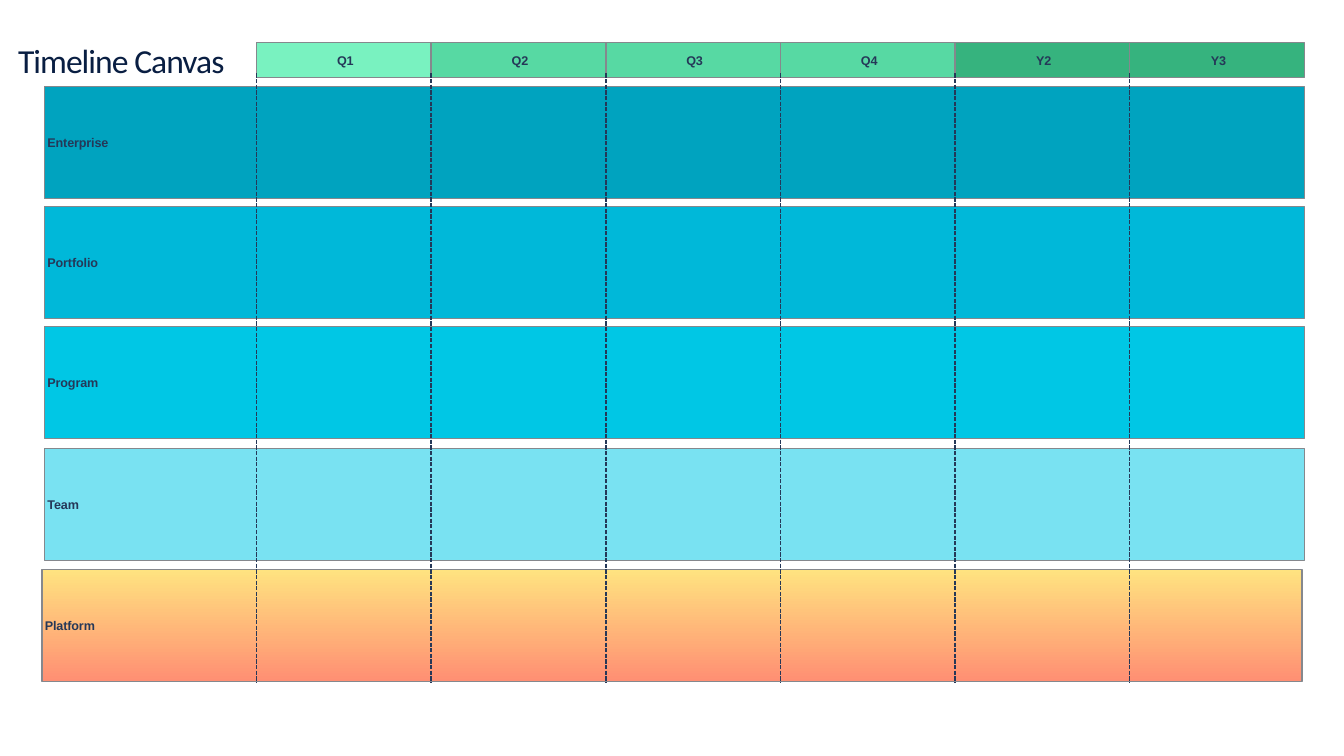
from dataclasses import dataclass
from pptx import Presentation
from pptx.dml.color import RGBColor
from pptx.enum.dml import MSO_LINE
from pptx.enum.shapes import MSO_CONNECTOR, MSO_SHAPE
from pptx.enum.text import MSO_ANCHOR, PP_ALIGN
from pptx.oxml.ns import qn
from pptx.util import Cm, Pt
from lxml.etree import SubElement


@dataclass(frozen=True)
class Theme:
    title_ink: str = "091E42"
    ink: str = "253858"
    border: str = "85888D"
    title_font: str = "Calibri"
    label_font: str = "Arial"
    title_size: int = 48
    label_size: int = 18
    line_width: int = 2
    first_quarter: str = "79F2C0"
    quarter: str = "57D9A3"
    year: str = "36B37E"
    enterprise: str = "00A3BF"
    portfolio: str = "00B8D9"
    program: str = "00C7E5"
    team: str = "79E2F2"
    platform: tuple = ("FFE380", "FF8F73")


theme = Theme()


def write(frame, text, font_name, size, color, bold, spacing, inset):
    frame.word_wrap = True
    frame.margin_left = frame.margin_right = inset
    frame.margin_top = frame.margin_bottom = inset
    paragraph = frame.paragraphs[0]
    run = paragraph.add_run()
    run.text = text
    paragraph.font.name = font_name
    paragraph.font.size = Pt(size)
    paragraph.font.bold = bold
    paragraph.font.color.rgb = RGBColor.from_string(color)
    run._r.get_or_add_rPr().set("spc", str(spacing))
    return paragraph


def add_block(shapes, text, left, top, width, height, colors, align):
    block = shapes.add_shape(
        MSO_SHAPE.RECTANGLE, Cm(left), Cm(top), Cm(width), Cm(height))
    block.shadow.inherit = False
    if isinstance(colors, tuple):
        block.fill.gradient()
        block.fill.gradient_angle = 270
        for stop, color in zip(block.fill.gradient_stops, colors):
            stop.color.rgb = RGBColor.from_string(color)
    else:
        block.fill.solid()
        block.fill.fore_color.rgb = RGBColor.from_string(colors)
    block.line.color.rgb = RGBColor.from_string(theme.border)
    block.line.width = Pt(theme.line_width)
    block.text_frame.vertical_anchor = MSO_ANCHOR.MIDDLE
    label = write(block.text_frame, text, theme.label_font, theme.label_size,
                  theme.ink, True, -20, 0)
    label.alignment = align
    label._p.get_or_add_pPr().set("indent", str(Cm(0.15)))


presentation = Presentation()
presentation.slide_width = Cm(67.73)
presentation.slide_height = Cm(38.1)
slide = presentation.slides.add_slide(presentation.slide_layouts[6])

title = slide.shapes.add_textbox(Cm(0.76), Cm(1.85), Cm(63.78), Cm(3.48))
write(title.text_frame, "Timeline Canvas", theme.title_font, theme.title_size,
      theme.title_ink, False, -140, Cm(0.15))

lanes = [
    ("Enterprise", 2.24, 4.37, theme.enterprise),
    ("Portfolio", 2.24, 10.41, theme.portfolio),
    ("Program", 2.24, 16.46, theme.program),
    ("Team", 2.24, 22.61, theme.team),
    ("Platform", 2.11, 28.7, theme.platform),
]
for name, left, top, colors in lanes:
    add_block(slide.shapes, name, left, top, 63.5, 5.64, colors, PP_ALIGN.LEFT)

periods = [
    ("Q1", theme.first_quarter),
    ("Q2", theme.quarter),
    ("Q3", theme.quarter),
    ("Q4", theme.quarter),
    ("Y2", theme.year),
    ("Y3", theme.year),
]
first_period, period_width = 12.93, 8.8
header = slide.shapes.add_group_shape().shapes
dividers = slide.shapes.add_group_shape().shapes
for index, (name, color) in enumerate(periods):
    left = first_period + index * period_width
    add_block(header, name, left, 2.15, period_width, 1.75, color,
              PP_ALIGN.CENTER)
    divider = dividers.add_connector(
        MSO_CONNECTOR.STRAIGHT, Cm(left), Cm(3.7), Cm(left), Cm(34.42))
    divider.line.color.rgb = RGBColor.from_string(theme.ink)
    divider.line.width = Pt(theme.line_width)
    divider.line.dash_style = MSO_LINE.SQUARE_DOT
    SubElement(divider._element.spPr, qn("a:effectLst"))

presentation.save("out.pptx")
